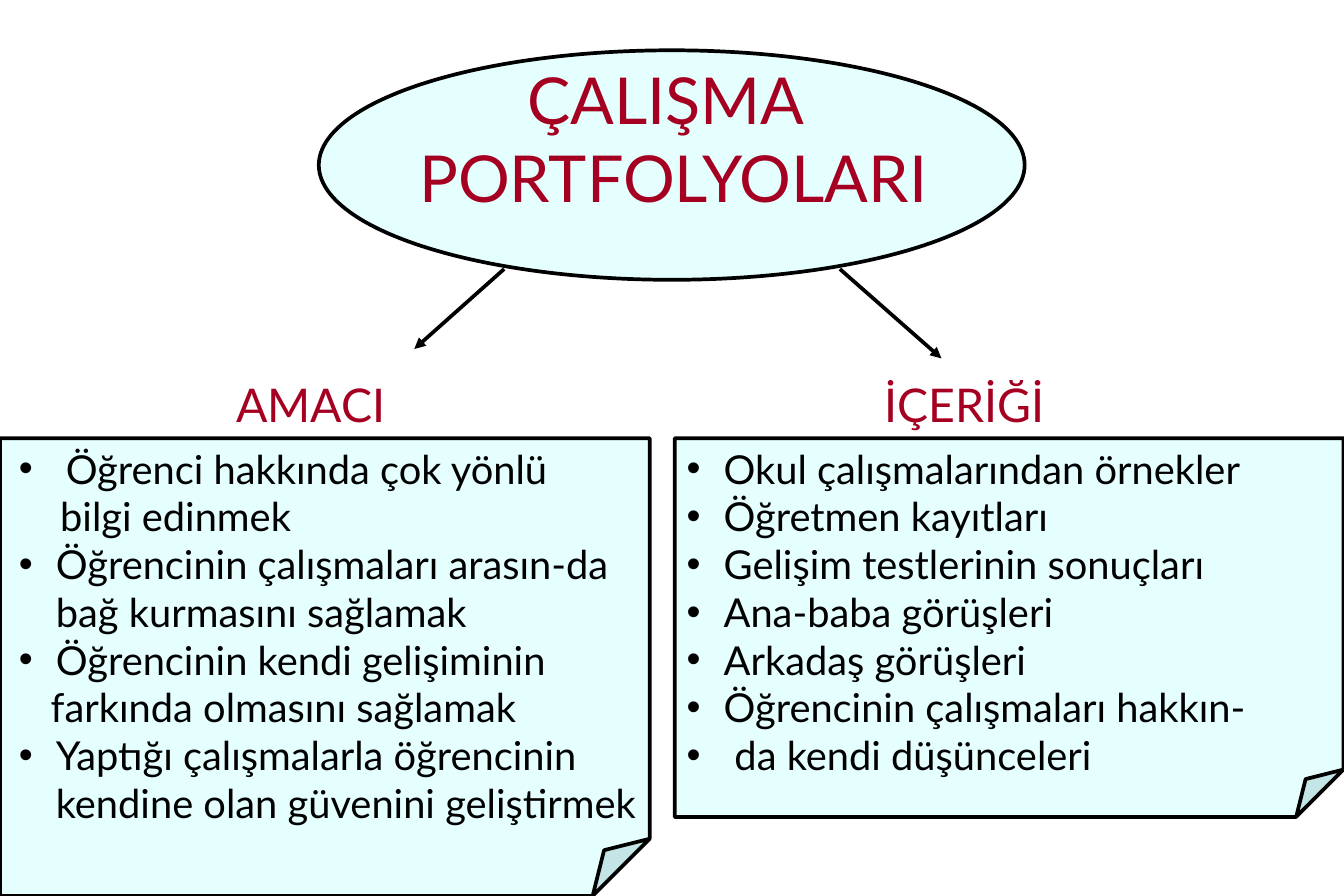
from lxml import etree
from pptx import Presentation
from pptx.dml.color import RGBColor
from pptx.enum.shapes import MSO_CONNECTOR, MSO_SHAPE
from pptx.enum.text import MSO_ANCHOR, PP_ALIGN
from pptx.oxml.ns import qn
from pptx.util import Cm, Pt

OVAL, NOTE = MSO_SHAPE.OVAL, MSO_SHAPE.FOLDED_CORNER
STRAIGHT = MSO_CONNECTOR.STRAIGHT
CENTER, BOTTOM = PP_ALIGN.CENTER, MSO_ANCHOR.BOTTOM

FONT = "Lato"
BLACK, RED, PALE_CYAN = "000000", "A50021", "CCFFFF"
NOTE_TOP, LABEL_TOP = 9.32, 7.87
HANG = 0.79

# Each item: text, left margin in cm, whether it has a bullet
PURPOSES = [
    ("Öğrenci hakkında çok yönlü", 1.0, True),
    ("bilgi edinmek", 0.88, False),
    ("Öğrencinin çalışmaları arasın-da bağ kurmasını sağlamak", HANG, True),
    ("Öğrencinin kendi gelişiminin", HANG, True),
    ("farkında olmasını sağlamak", 0.68, False),
    ("Yaptığı çalışmalarla öğrencinin kendine olan güvenini geliştirmek", HANG, True),
]
CONTENTS = [
    ("Okul çalışmalarından örnekler", HANG, True),
    ("Öğretmen kayıtları", HANG, True),
    ("Gelişim testlerinin sonuçları", HANG, True),
    ("Ana-baba görüşleri", HANG, True),
    ("Arkadaş görüşleri", HANG, True),
    ("Öğrencinin çalışmaları hakkın-", HANG, True),
    ("da kendi düşünceleri", 1.02, True),
]


def color(hex_code):
    return RGBColor.from_string(hex_code)


def set_outline(line):
    line.color.rgb = color(BLACK)
    line.width = Pt(2.25)


def add_panel(page, kind, left, top, width, height):
    """Add a half-transparent outlined shape."""
    panel = page.shapes.add_shape(kind, Cm(left), Cm(top), Cm(width), Cm(height))
    panel.shadow.inherit = False
    panel.fill.solid()
    panel.fill.fore_color.rgb = color(PALE_CYAN)
    tint = panel._element.spPr.find(qn("a:solidFill"))[0]
    etree.SubElement(tint, qn("a:alpha"), val="50000")
    set_outline(panel.line)
    return panel


def add_note(page, left, top, width, height):
    """Add a panel whose folded corner is an eighth of its shorter side."""
    note = add_panel(page, NOTE, left, top, width, height)
    guides = note._element.spPr.find(qn("a:prstGeom")).find(qn("a:avLst"))
    etree.SubElement(guides, qn("a:gd"), name="adj", fmla="val 12500")


def add_arrow(page, start_x, start_y, end_x, end_y):
    arrow = page.shapes.add_connector(
        STRAIGHT, Cm(start_x), Cm(start_y), Cm(end_x), Cm(end_y))
    set_outline(arrow.line)
    outline = arrow._element.spPr.find(qn("a:ln"))
    etree.SubElement(outline, qn("a:tailEnd"), type="triangle")
    etree.SubElement(arrow._element.spPr, qn("a:effectLst"))


def style(para, size, hex_code):
    for span in para.runs:
        span.font.name = FONT
        span.font.size = Pt(size)
        span.font.color.rgb = color(hex_code)


def add_text_box(page, left, top, width, height):
    box = page.shapes.add_textbox(Cm(left), Cm(top), Cm(width), Cm(height))
    box.text_frame.word_wrap = True
    return box.text_frame


def add_heading(page, text, size, left, top, width, height):
    frame = add_text_box(page, left, top, width, height)
    frame.text = text
    style(frame.paragraphs[0], size, RED)
    return frame


def set_indent(para, margin, bulleted):
    properties = para._p.get_or_add_pPr()
    properties.set("marL", str(Cm(margin)))
    properties.set("indent", str(Cm(-margin) if bulleted else 0))
    if bulleted:
        etree.SubElement(properties, qn("a:buFont"), typeface="Arial")
        etree.SubElement(properties, qn("a:buChar"), char="•")


def add_list(page, items, left, top, width, height):
    frame = add_text_box(page, left, top, width, height)
    frame.text = "\n".join(text for text, _, _ in items)
    for para, (_, margin, bulleted) in zip(frame.paragraphs, items):
        set_indent(para, margin, bulleted)
        style(para, 24, BLACK)


def main():
    deck = Presentation()
    deck.slide_width, deck.slide_height = Cm(28.58), Cm(19.05)
    page = deck.slides.add_slide(deck.slide_layouts[6])

    add_note(page, 14.35, NOTE_TOP, 14.22, 8.05)
    add_note(page, 0, NOTE_TOP, 13.82, 9.73)
    add_panel(page, OVAL, 6.78, 1.07, 15.01, 4.88)

    title = add_heading(page, "ÇALIŞMA \vPORTFOLYOLARI", 39, 1.47, 1.52, 25.7, 3.18)
    title.vertical_anchor = BOTTOM
    title.paragraphs[0].alignment = CENTER

    add_arrow(page, 10.72, 5.72, 8.81, 7.42)
    add_arrow(page, 17.86, 5.72, 20.02, 7.62)

    add_heading(page, "AMACI", 28, 4.78, LABEL_TOP, 3.86, 1.45)
    add_heading(page, "İÇERİĞİ", 28, 18.57, LABEL_TOP, 4.55, 1.45)

    add_list(page, CONTENTS, 14.35, NOTE_TOP, 14.12, 7.37)
    add_list(page, PURPOSES, 0.15, NOTE_TOP, 14.12, 9.37)

    deck.save("out.pptx")


if __name__ == "__main__":
    main()
